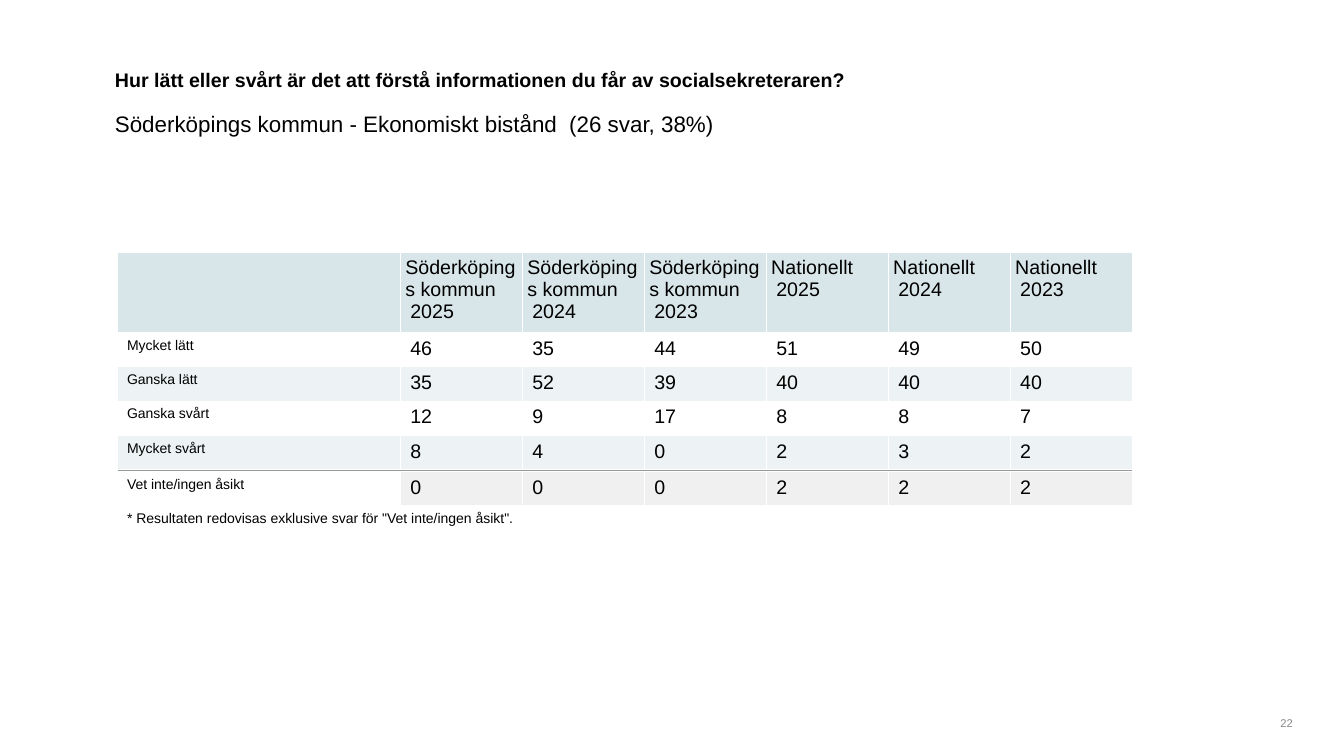
from lxml import etree
from pptx import Presentation
from pptx import util as u
from pptx.dml.color import RGBColor
from pptx.enum import text
from pptx.oxml import ns

COLORS = {
    "ink": "000000", "muted": "898989", "border": "FFFFFF", "header": "D9E6E9",
    "band": "EDF3F4", "divider": "999999", "unsure": "F0F0F0",
}
FONT = "Arial"
LEFT, WIDTH = 1.04, 11.25
LINE = 0.42
INSET = 0.05
LABEL_WIDTH, VALUE_WIDTH = 2.81, 1.21
HEADER_HEIGHT, ROW_HEIGHT, DIVIDER_HEIGHT = 0.8, 0.34, 0.02

REGIONS = ["Söderköpings kommun", "Nationellt"]
YEARS = [2025, 2024, 2023]
ANSWERS = {
    "Mycket lätt": [46, 35, 44, 51, 49, 50],
    "Ganska lätt": [35, 52, 39, 40, 40, 40],
    "Ganska svårt": [12, 9, 17, 8, 8, 7],
    "Mycket svårt": [8, 4, 0, 2, 3, 2],
}
UNSURE = [0, 0, 0, 2, 2, 2]


def write(frame, content, size=14, color="ink", bold=False, align=text.PP_ALIGN.LEFT,
          indents=(0,), anchor=None):
    """Fill a text frame; each line becomes a paragraph with its own indent."""
    frame.word_wrap = True
    if anchor is not None:
        frame.vertical_anchor = anchor
    for index, line in enumerate(content.split("\n")):
        para = frame.paragraphs[0] if index == 0 else frame.add_paragraph()
        para.alignment = align
        para.space_before = u.Pt(0)
        props = para._p.get_or_add_pPr()
        props.set("marL", str(u.Inches(indents[index])))
        props.set("indent", "0")
        span = para.add_run()
        span.text = line
        span.font.name, span.font.size, span.font.bold = FONT, u.Pt(size), bold
        span.font.color.rgb = RGBColor.from_string(COLORS[color])


def place(shape, left, top, width, height):
    shape.left, shape.top = u.Inches(left), u.Inches(top)
    shape.width, shape.height = u.Inches(width), u.Inches(height)


def add_headings(page, left, top, width):
    headings = [
        ("Hur lätt eller svårt är det att förstå informationen du får av socialsekreteraren?",
         14, True),
        ("Söderköpings kommun - Ekonomiskt bistånd  (26 svar, 38%)", 16, False),
    ]
    for index, (content, size, bold) in enumerate(headings):
        box = page.placeholders[index]
        place(box, left, top + index * LINE, width, LINE)
        write(box.text_frame, content, size, bold=bold, anchor=text.MSO_ANCHOR.TOP)


def set_borders(cell, sides):
    props = cell._tc.get_or_add_tcPr()
    for index, side in enumerate(sides):
        line = etree.Element(ns.qn(f"a:ln{side}"), w=str(u.Pt(1)))
        fill = etree.SubElement(line, ns.qn("a:solidFill"))
        etree.SubElement(fill, ns.qn("a:srgbClr"), val=COLORS["border"])
        props.insert(index, line)


def style_cell(cell, fill=None, inset=INSET, sides="LRTB"):
    cell.margin_left = cell.margin_right = u.Inches(inset)
    cell.margin_top = cell.margin_bottom = u.Inches(inset)
    if fill:
        cell.fill.solid()
        cell.fill.fore_color.rgb = RGBColor.from_string(COLORS[fill])
    else:
        cell.fill.background()
    set_borders(cell, sides)


def fill_row(table, row, label, values, label_fill=None, value_fill=None, sides="LRTB"):
    for column, value in enumerate([label, *values]):
        cell = table.cell(row, column)
        style_cell(cell, value_fill if column else label_fill, sides=sides)
        write(cell.text_frame, str(value), 14 if column else 10, indents=(INSET,))


def add_divider(table, row):
    for cell in table.rows[row].cells:
        style_cell(cell, "divider", inset=0, sides="B")
        etree.SubElement(cell.text_frame.paragraphs[0]._p, ns.qn("a:endParaRPr"), sz="100")
    table.cell(row, 0).merge(table.cell(row, len(table.columns) - 1))


def add_header(table):
    style_cell(table.cell(0, 0), "header")
    titles = [f"{region}\n{year}" for region in REGIONS for year in YEARS]
    for column, title in enumerate(titles, 1):
        cell = table.cell(0, column)
        style_cell(cell, "header")
        write(cell.text_frame, title, indents=(0, INSET))


def add_footnote(table, row):
    for cell in table.rows[row].cells:
        style_cell(cell)
    write(table.cell(row, 0).text_frame,
          '* Resultaten redovisas exklusive svar för "Vet inte/ingen åsikt".',
          10, indents=(INSET,))
    table.cell(row, 0).merge(table.cell(row, len(table.columns) - 1))


def add_answer_table(page, left, top):
    widths = [LABEL_WIDTH] + [VALUE_WIDTH] * len(REGIONS) * len(YEARS)
    heights = [HEADER_HEIGHT, *[ROW_HEIGHT] * len(ANSWERS), DIVIDER_HEIGHT,
               ROW_HEIGHT, ROW_HEIGHT]
    frame = page.shapes.add_table(len(heights), len(widths), u.Inches(left), u.Inches(top),
                                  u.Inches(sum(widths)), u.Inches(sum(heights)))
    table = frame.table
    table.first_row = table.horz_banding = False
    for column, width in zip(table.columns, widths):
        column.width = u.Inches(width)
    for row, height in zip(table.rows, heights):
        row.height = u.Inches(height)

    add_header(table)
    last = len(ANSWERS)
    for row, (label, values) in enumerate(ANSWERS.items(), 1):
        band = None if row % 2 else "band"
        fill_row(table, row, label, values, band, band, "LRT" if row == last else "LRTB")
    add_divider(table, last + 1)
    fill_row(table, last + 2, "Vet inte/ingen åsikt", UNSURE, value_fill="unsure")
    add_footnote(table, last + 3)


def add_page_number(page, left, top, width, height):
    box = page.shapes.add_textbox(*map(u.Inches, (left, top, width, height)))
    write(box.text_frame, "22", 8, "muted", align=text.PP_ALIGN.RIGHT,
          anchor=text.MSO_ANCHOR.BOTTOM)


def main():
    deck = Presentation()
    deck.slide_width, deck.slide_height = u.Inches(13.33), u.Inches(7.5)
    page = deck.slides.add_slide(deck.slide_layouts[0])
    add_headings(page, LEFT, 0.62, WIDTH)
    add_answer_table(page, 1.16, 2.5)
    add_page_number(page, 12.5, 7.08, LINE, LINE / 2)
    deck.save("out.pptx")


if __name__ == "__main__":
    main()
